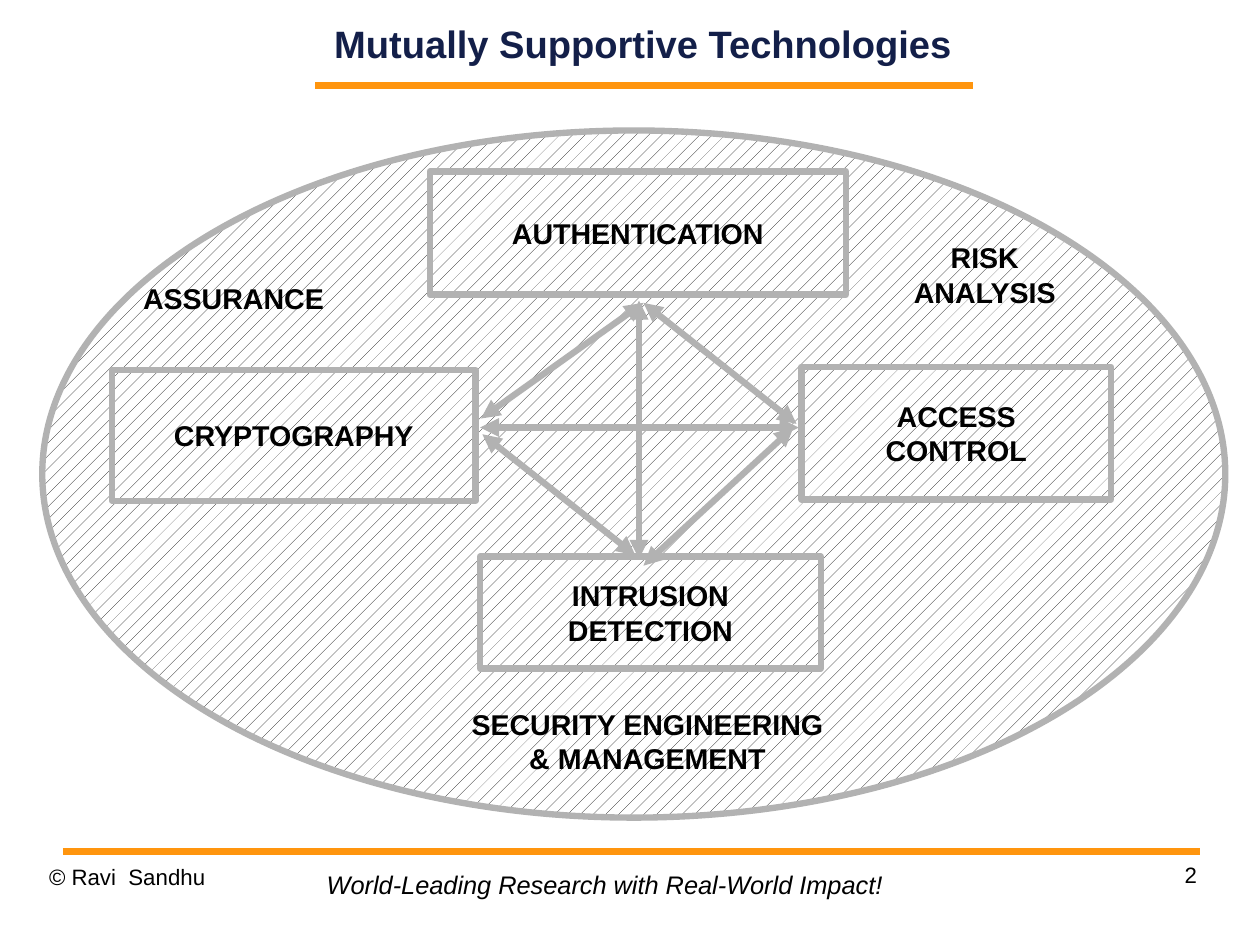
from lxml import etree
from pptx import Presentation
from pptx.dml.color import RGBColor
from pptx.enum.dml import MSO_PATTERN
from pptx.enum.shapes import MSO_CONNECTOR, MSO_SHAPE
from pptx.enum.text import MSO_ANCHOR, MSO_AUTO_SIZE, PP_ALIGN
from pptx.oxml.ns import qn
from pptx.util import Cm, Pt

ORANGE = RGBColor(0xFF, 0x95, 0x0E)
NAVY = RGBColor(0x13, 0x1F, 0x49)
GRAY = RGBColor(0xB2, 0xB2, 0xB2)
BLACK = RGBColor(0, 0, 0)
WHITE = RGBColor(0xFF, 0xFF, 0xFF)

STRAIGHT = MSO_CONNECTOR.STRAIGHT
RECTANGLE, OVAL = MSO_SHAPE.RECTANGLE, MSO_SHAPE.OVAL
DOTTED = MSO_PATTERN.PERCENT_10
TOP, MIDDLE = MSO_ANCHOR.TOP, MSO_ANCHOR.MIDDLE
GROW = MSO_AUTO_SIZE.SHAPE_TO_FIT_TEXT
NO_GROW = MSO_AUTO_SIZE.NONE
LEFT, CENTER, RIGHT = PP_ALIGN.LEFT, PP_ALIGN.CENTER, PP_ALIGN.RIGHT

TITLE_FONT = {"name": "Arial", "size": Pt(24), "bold": True}
LABEL_FONT = {"name": "Arial", "size": Pt(18), "bold": True}
FOOTER_FONT = {"name": "Arial", "size": Pt(14)}
SLOGAN_FONT = {"name": "Arial", "size": Pt(16), "italic": True}

NO_INSETS = {"margin_left": 0, "margin_top": 0, "margin_right": 0, "margin_bottom": 0}
INSETS = {"margin_left": Cm(0.28), "margin_top": Cm(0.13),
          "margin_right": Cm(0.28), "margin_bottom": Cm(0.13)}
FLUSH_FRAME = {**NO_INSETS, "word_wrap": True, "vertical_anchor": TOP}
TITLE_FRAME = {**NO_INSETS, "word_wrap": True, "vertical_anchor": MIDDLE,
               "auto_size": NO_GROW}
BOX_FRAME = {**INSETS, "word_wrap": False, "vertical_anchor": MIDDLE}
LABEL_FRAME = {**INSETS, "word_wrap": False, "auto_size": GROW}

TECHNOLOGIES = [
    ("AUTHENTICATION", 8.61, 0.91, 9.25, 2.74),
    ("INTRUSION\nDETECTION", 9.73, 9.47, 7.57, 2.49),
    ("CRYPTOGRAPHY", 1.55, 5.33, 8.08, 2.9),
    ("ACCESS\nCONTROL", 16.87, 5.25, 6.88, 2.95),
]
ARROWS = [
    (13.36, 3.83, 9.75, 6.4),
    (9.78, 6.75, 13.18, 9.44),
    (13.36, 9.67, 16.69, 6.6),
    (13.36, 3.83, 16.76, 6.52),
    (13.26, 3.78, 13.26, 9.52),
    (9.73, 6.6, 16.81, 6.6),
]
LABELS = [
    ("ASSURANCE", 1.96, 3.22, 4.62, 1.04, LEFT),
    ("RISK\nANALYSIS", 19.08, 2.31, 3.73, 1.8, CENTER),
    ("SECURITY ENGINEERING\n& MANAGEMENT", 9.22, 12.67, 8.46, 1.8, CENTER),
]


def set_attrs(obj, values):
    for name, value in values.items():
        setattr(obj, name, value)


def write(sp, text, frame, font, paragraph, color=BLACK):
    tf = sp.text_frame
    tf.text = text
    set_attrs(tf, frame)
    for p in tf.paragraphs:
        set_attrs(p, paragraph)
        for r in p.runs:
            set_attrs(r.font, font)
            r.font.color.rgb = color


def add_text(slide, box, text, frame, font, paragraph):
    sp = slide.shapes.add_textbox(*map(Cm, box))
    write(sp, text, frame, font, paragraph)


def add_line(slide, x1, y1, x2, y2, color, width, arrows=False):
    line = slide.shapes.add_connector(STRAIGHT, Cm(x1), Cm(y1), Cm(x2), Cm(y2))
    line.line.color.rgb = color
    line.line.width = Pt(width)
    if arrows:
        ln = line.line._get_or_add_ln()
        for end in ("a:headEnd", "a:tailEnd"):
            etree.SubElement(ln, qn(end), type="triangle")
    etree.SubElement(line._element.spPr, qn("a:effectLst"))


def add_outlined(slide, kind, box):
    sp = slide.shapes.add_shape(kind, *map(Cm, box))
    sp.shadow.inherit = False
    sp.fill.background()
    sp.line.color.rgb = GRAY
    sp.line.width = Pt(4)
    return sp


def build_header(slide, x, y, w, h):
    add_line(slide, x, y + h, x + w, y + h, ORANGE, 4.31)
    title = slide.shapes.title
    set_attrs(title, {"left": Cm(x), "top": Cm(y), "width": Cm(w - 0.06), "height": Cm(h)})
    write(title, "Mutually Supportive Technologies", TITLE_FRAME, TITLE_FONT,
          {"alignment": CENTER}, NAVY)


def build_footer(slide, x, y, w):
    add_line(slide, x, y, x + w, y, ORANGE, 4.31)
    add_text(slide, (x - 0.31, y + 0.26, 6.53, 1.45), "© Ravi  Sandhu",
             FLUSH_FRAME, FOOTER_FONT, {"alignment": LEFT, "line_spacing": 1.01})
    add_text(slide, (x + w - 6.6, y + 0.21, 6.53, 1.45), "2",
             FLUSH_FRAME, FOOTER_FONT, {"alignment": RIGHT, "line_spacing": 1.01})
    add_text(slide, (x + 5.61, y + 0.26, 12.9, 0.94),
             "World-Leading Research with Real-World Impact!",
             {"word_wrap": False, "auto_size": GROW}, SLOGAN_FONT, {"alignment": LEFT})


def build_diagram(slide, x, y, w, h):
    ellipse = add_outlined(slide, OVAL, (x, y, w, h))
    ellipse.fill.patterned()
    ellipse.fill.pattern = DOTTED
    ellipse.fill.fore_color.rgb = BLACK
    ellipse.fill.back_color.rgb = WHITE
    for text, dx, dy, bw, bh in TECHNOLOGIES:
        sp = add_outlined(slide, RECTANGLE, (x + dx, y + dy, bw, bh))
        write(sp, text, BOX_FRAME, LABEL_FONT, {"alignment": CENTER})
    for x1, y1, x2, y2 in ARROWS:
        add_line(slide, x + x1, y + y1, x + x2, y + y2, GRAY, 4, arrows=True)
    for text, dx, dy, bw, bh, align in LABELS:
        add_text(slide, (x + dx, y + dy, bw, bh), text, LABEL_FRAME, LABEL_FONT,
                 {"alignment": align})


def main():
    prs = Presentation()
    prs.slide_width, prs.slide_height = Cm(28), Cm(21)
    slide = prs.slides.add_slide(prs.slide_layouts[5])
    build_header(slide, 7.01, 0, 14.61, 1.9)
    build_footer(slide, 1.4, 18.92, 25.27)
    build_diagram(slide, 0.94, 2.9, 26.29, 15.27)
    prs.save("out.pptx")


if __name__ == "__main__":
    main()
